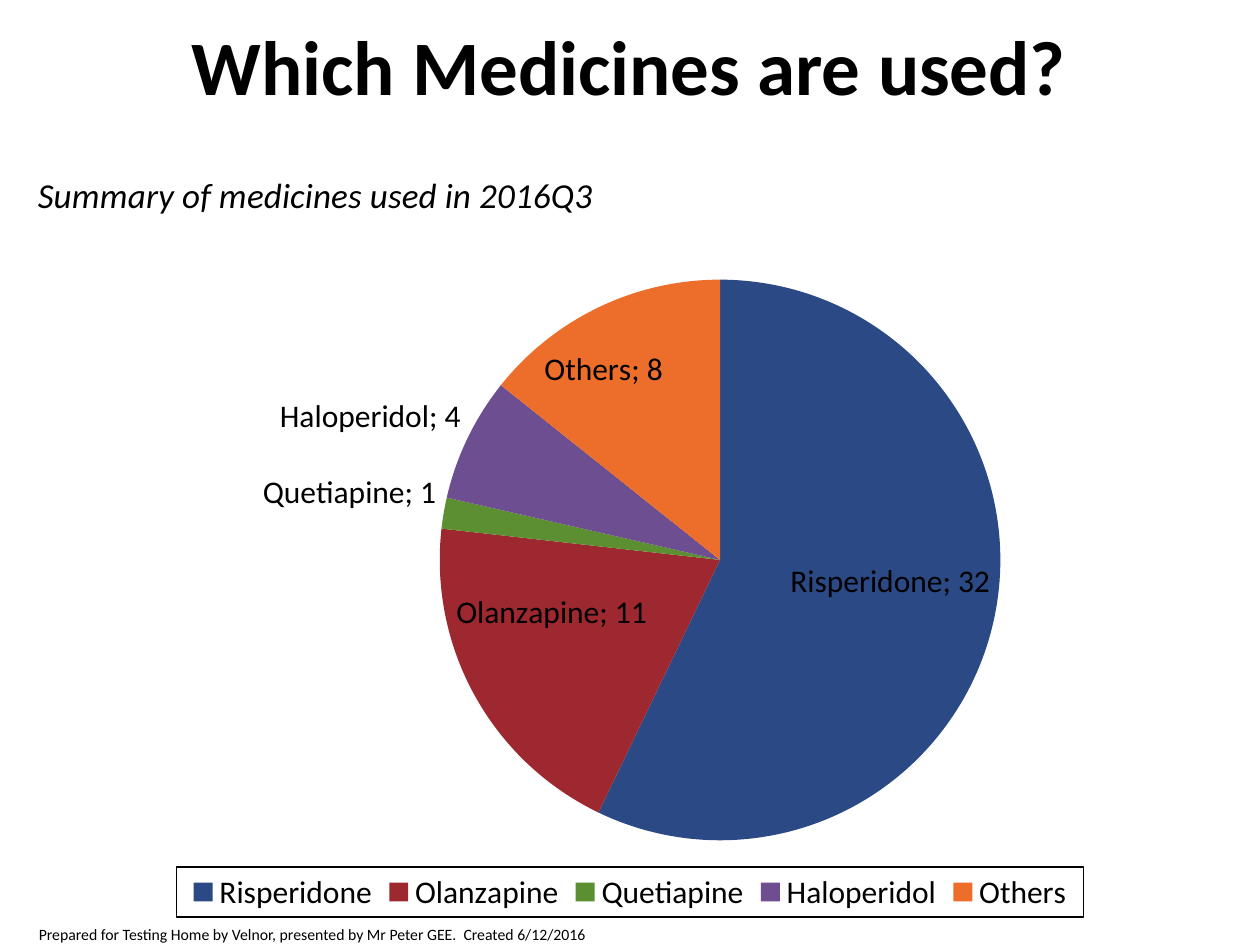
from dataclasses import dataclass

from pptx import Presentation
from pptx.chart.data import CategoryChartData
from pptx.dml.color import RGBColor
from pptx.enum.chart import XL_CHART_TYPE as ChartType
from pptx.enum.chart import XL_LABEL_POSITION as LabelPosition
from pptx.enum.chart import XL_LEGEND_POSITION as LegendPosition
from pptx.enum.text import PP_ALIGN as Align
from pptx.oxml import parse_xml
from pptx.oxml.ns import nsdecls, qn
from pptx.util import Inches, Pt


@dataclass(frozen=True)
class Theme:
    font: str = "Calibri"
    ink: str = "000000"
    slices: tuple = ("2B4A85", "9E282F", "5B8F32", "6C4E91", "ED6E2B")
    heading: int = 44
    chart_title: int = 20
    label: int = 18
    footer: int = 9


theme = Theme()
MEDICINES = {"Risperidone": 32, "Olanzapine": 11, "Quetiapine": 1,
             "Haloperidol": 4, "Others": 8}
CHART_LEFT, CHART_TOP, CHART_WIDTH, CHART_HEIGHT = 0.1, 1.15, 9.79, 6.15


def style_font(font, size, bold=False, italic=False):
    font.name, font.size = theme.font, Pt(size)
    font.bold, font.italic = bold, italic
    font.color.rgb = RGBColor.from_string(theme.ink)


def place(element, index, left, top, width=None, height=None):
    """Fix a chart part at slide inches; index is where its layout belongs."""
    for old in element.findall(qn("c:layout")):
        element.remove(old)
    target = '<c:layoutTarget val="inner"/>' if element.tag == qn("c:plotArea") else ""
    values = {"x": (left - CHART_LEFT) / CHART_WIDTH,
              "y": (top - CHART_TOP) / CHART_HEIGHT}
    if width:
        values |= {"w": width / CHART_WIDTH, "h": height / CHART_HEIGHT}
    modes = "".join(f'<c:{key}Mode val="edge"/>' for key in "xy")
    sizes = "".join(f'<c:{key} val="{value:.4f}"/>' for key, value in values.items())
    element.insert(index, parse_xml(
        f'<c:layout {nsdecls("c")}><c:manualLayout>{target}{modes}{sizes}'
        '</c:manualLayout></c:layout>'))


deck = Presentation()
deck.slide_width, deck.slide_height = Inches(10), Inches(7.5)
page = deck.slides.add_slide(deck.slide_layouts[6])

# Footer and heading
texts = [
    ("Prepared for Testing Home by Velnor, presented by Mr Peter GEE.  Created 6/12/2016",
     (0.21, 7.29, 9.58, 0.21), theme.footer, False, Align.LEFT),
    ("Which Medicines are used?",
     (0.1, 0.1, 9.79, 0.94), theme.heading, True, Align.CENTER),
]
for words, bounds, size, bold, align in texts:
    box = page.shapes.add_textbox(*map(Inches, bounds))
    box.text_frame.word_wrap = True
    box.text_frame.text = words
    para = box.text_frame.paragraphs[0]
    para.alignment = align
    style_font(para.runs[0].font, size, bold)

# Pie chart
data = CategoryChartData()
data.categories = list(MEDICINES)
data.add_series("Series 1", list(MEDICINES.values()))
chart = page.shapes.add_chart(
    ChartType.PIE, Inches(CHART_LEFT), Inches(CHART_TOP),
    Inches(CHART_WIDTH), Inches(CHART_HEIGHT), data).chart
style_font(chart.font, 10)

chart.has_title = True
title = chart.chart_title
title.text_frame.text = "Summary of medicines used in 2016Q3"
style_font(title.text_frame.paragraphs[0].runs[0].font, theme.chart_title, italic=True)
place(title._element, 1, 0.25, 1.3)

plot = chart.plots[0]
plot.vary_by_categories = True
for index, color in enumerate(theme.slices):
    fill = plot.series[0].points[index].format.fill
    fill.solid()
    fill.fore_color.rgb = RGBColor.from_string(color)
place(chart._chartSpace.find(".//" + qn("c:plotArea")), 0, 3.49, 2.22, 4.45, 4.45)

labels = plot.series[0].data_labels
labels.show_value = labels.show_category_name = True
labels.show_percentage = labels.show_legend_key = False
labels.position = LabelPosition.BEST_FIT
style_font(labels.font, theme.label)
labels._element.find(qn("c:showBubbleSize")).addnext(
    parse_xml(f'<c:separator {nsdecls("c")}>; </c:separator>'))

chart.has_legend = True
legend = chart.legend
legend.position = LegendPosition.BOTTOM
legend.include_in_layout = False
style_font(legend.font, theme.label)
place(legend._element, 1, 1.4, 6.88, 7.2, 0.4)
legend._element.find(qn("c:overlay")).addnext(parse_xml(
    f'<c:spPr {nsdecls("c", "a")}><a:ln w="{Pt(1)}"><a:solidFill>'
    f'<a:srgbClr val="{theme.ink}"/></a:solidFill></a:ln></c:spPr>'))

deck.save("out.pptx")
